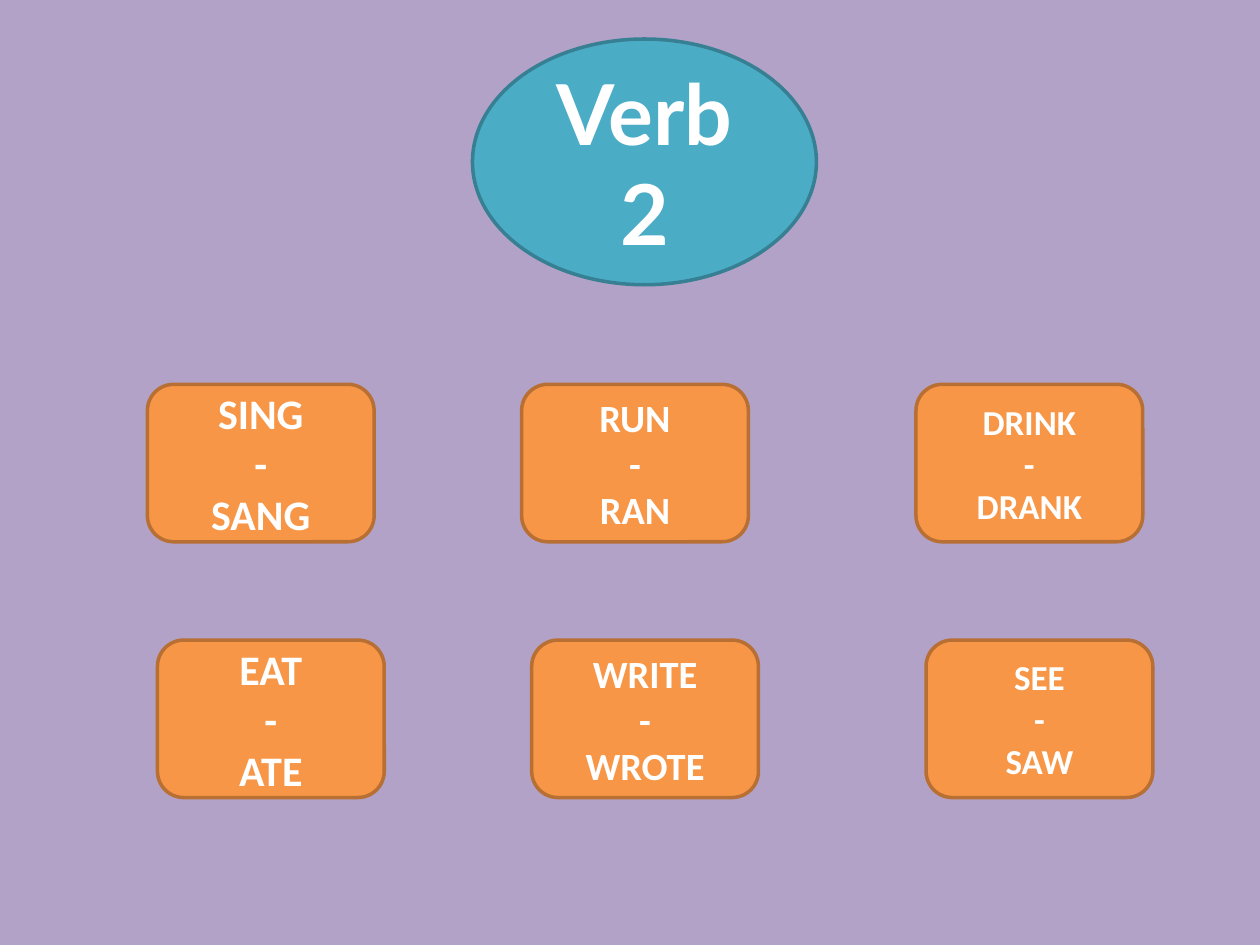
from pptx import Presentation
from pptx.dml.color import RGBColor
from pptx.enum.shapes import MSO_SHAPE
from pptx.enum.text import MSO_ANCHOR, PP_ALIGN
from pptx.util import Inches, Pt

LAVENDER = RGBColor(0xB3, 0xA2, 0xC7)
TEAL = RGBColor(0x4B, 0xAC, 0xC6)
DARK_TEAL = RGBColor(0x37, 0x7F, 0x92)
ORANGE = RGBColor(0xF7, 0x96, 0x46)
DARK_ORANGE = RGBColor(0xB7, 0x6F, 0x34)
WHITE = RGBColor(0xFF, 0xFF, 0xFF)

# Left edge and text size of each column of cards
COLUMNS = [(1.17, 24), (4.14, 22), (7.27, 20)]
# Top edge, shift to the right, and verbs with their past forms
ROWS = [
    (3.05, 0, [("SING", "SANG"), ("RUN", "RAN"), ("DRINK", "DRANK")]),
    (5.08, 0.08, [("EAT", "ATE"), ("WRITE", "WROTE"), ("SEE", "SAW")]),
]


class VerbPage:
    def __init__(self, page):
        self.page = page
        page.background.fill.solid()
        page.background.fill.fore_color.rgb = LAVENDER

    def add_filled_shape(self, kind, left, top, width, height, fill, outline):
        shape = self.page.shapes.add_shape(
            kind, Inches(left), Inches(top), Inches(width), Inches(height))
        shape.shadow.inherit = False
        shape.fill.solid()
        shape.fill.fore_color.rgb = fill
        shape.line.color.rgb = outline
        shape.line.width = Pt(2)
        return shape

    def set_label(self, shape, text, font_name, size):
        frame = shape.text_frame
        frame.word_wrap = True
        frame.vertical_anchor = MSO_ANCHOR.MIDDLE
        frame.text = text
        for para in frame.paragraphs:
            para.alignment = PP_ALIGN.CENTER
            for span in para.runs:
                span.font.name = font_name
                span.font.size = Pt(size)
                span.font.bold = True
                span.font.color.rgb = WHITE

    def add_heading(self, text):
        oval = self.add_filled_shape(
            MSO_SHAPE.OVAL, 3.75, 0.31, 2.73, 1.95, TEAL, DARK_TEAL)
        self.set_label(oval, text, "Lato", 48)

    def add_verb_card(self, left, top, verb, past, size):
        card = self.add_filled_shape(
            MSO_SHAPE.ROUNDED_RECTANGLE, left, top, 1.8, 1.25, ORANGE, DARK_ORANGE)
        self.set_label(card, f"{verb}\n - \n{past}", "Calibri", size)


def main():
    deck = Presentation()
    deck.slide_width = Inches(10)
    deck.slide_height = Inches(7.5)
    blank_layout = deck.slide_layouts[6]
    verb_page = VerbPage(deck.slides.add_slide(blank_layout))

    verb_page.add_heading("Verb 2")
    for top, shift, verbs in ROWS:
        for (left, size), (verb, past) in zip(COLUMNS, verbs):
            verb_page.add_verb_card(left + shift, top, verb, past, size)

    deck.save("out.pptx")


if __name__ == "__main__":
    main()
